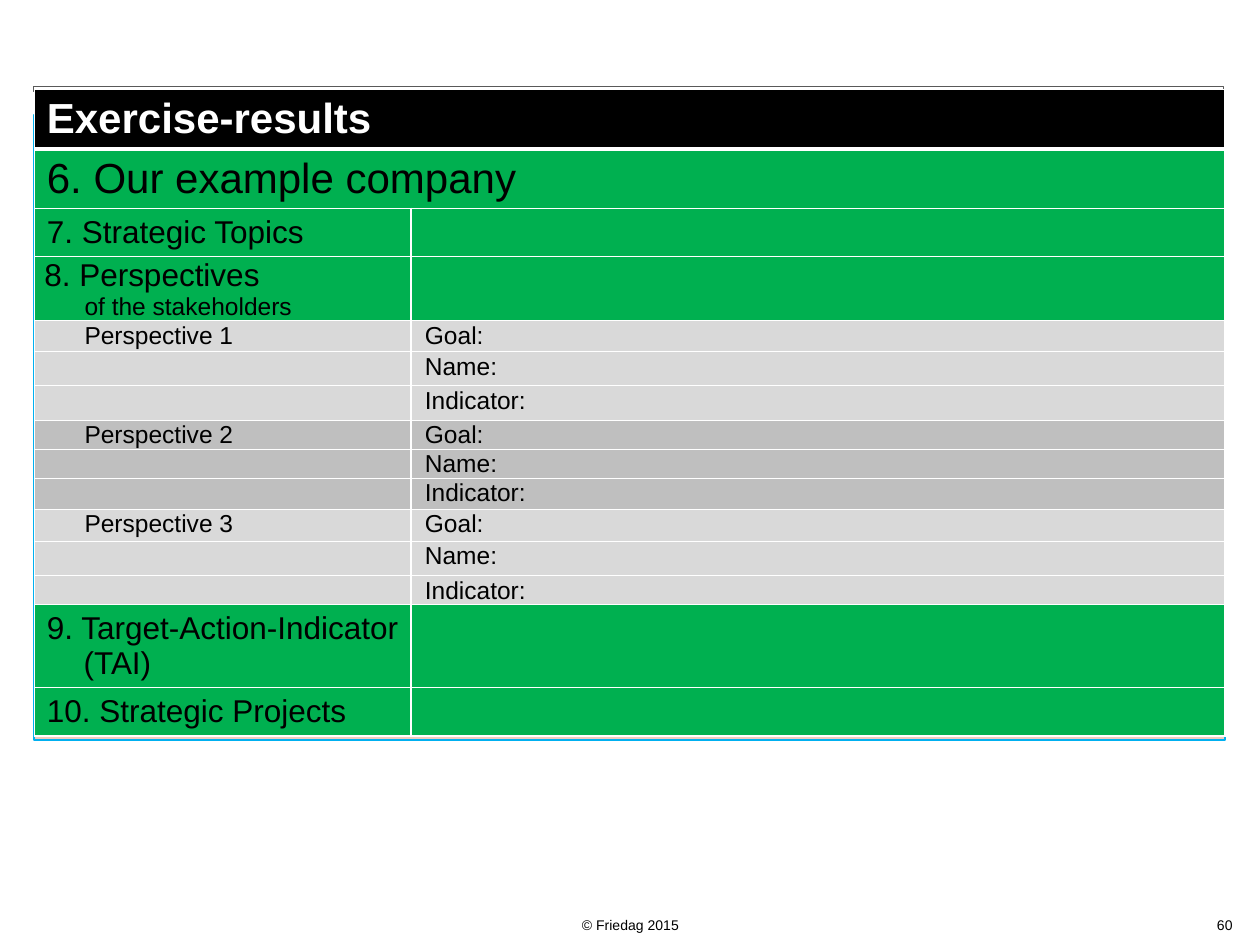
from dataclasses import dataclass

from lxml.etree import SubElement
from pptx import Presentation
from pptx.dml.color import RGBColor
from pptx.enum.shapes import MSO_SHAPE
from pptx.enum.text import MSO_ANCHOR, PP_ALIGN
from pptx.oxml.ns import qn
from pptx.util import Pt


@dataclass(frozen=True)
class Theme:
    font: str = "Arial"
    black: str = "000000"
    white: str = "FFFFFF"
    green: str = "00B050"
    light: str = "D9D9D9"
    dark: str = "BFBFBF"
    rule: str = "595959"
    orange: str = "CA5526"
    blue: str = "00B0F0"
    heading: int = 24
    topic: int = 18
    detail: int = 14
    footer: int = 8


theme = Theme()


def style_font(font, size, color=theme.black, bold=False):
    font.name = theme.font
    font.size = Pt(size)
    font.bold = bold
    font.color.rgb = RGBColor.from_string(color)


def style_cell(cell, fill, bottom=1, top=1):
    """White borders around a solid fill."""
    properties = cell._tc.get_or_add_tcPr()
    for side, width in (("L", 1), ("R", 1), ("T", top), ("B", bottom)):
        border = SubElement(properties, qn(f"a:ln{side}"), w=str(Pt(width)))
        border_fill = SubElement(border, qn("a:solidFill"))
        SubElement(border_fill, qn("a:srgbClr"), val=theme.white)
    cell.fill.solid()
    cell.fill.fore_color.rgb = RGBColor.from_string(fill)


presentation = Presentation()
presentation.slide_width, presentation.slide_height = Pt(720), Pt(540)
slide = presentation.slides.add_slide(presentation.slide_layouts[6])

# Thin rule above the table and tinted panel behind it
for left, top, width, height, fill, line, line_width in (
    (19, 49.7, 680, 2.9, theme.white, theme.rule, 0.5),
    (19.6, 65.5, 680.4, 357.3, theme.orange, theme.blue, 1),
):
    shape = slide.shapes.add_shape(
        MSO_SHAPE.RECTANGLE, Pt(left), Pt(top), Pt(width), Pt(height))
    shape.shadow.inherit = False
    shape.fill.solid()
    shape.fill.fore_color.rgb = RGBColor.from_string(fill)
    shape.line.color.rgb = RGBColor.from_string(line)
    shape.line.width = Pt(line_width)
panel_color = shape.fill._xPr.find(f"{qn('a:solidFill')}/{qn('a:srgbClr')}")
SubElement(panel_color, qn("a:alpha"), val="29000")

# Rows: height, fill, left text, right text, size, left margin, hanging indent
rows = [
    (34, theme.black, "Exercise-results", "", theme.heading, 0, 0),
    (34, theme.green, "6. Our example company", "", theme.heading, 0, 0),
    (27.5, theme.green, "7. Strategic Topics", "", theme.topic, 0, 0),
    (36.6, theme.green, "8. Perspectives", "", theme.topic, 28, -23),
]
perspective_heights = ((17.7, 19.4, 20), (16.3, 16.6, 17.7), (18.3, 19.7, 16.3))
for number, heights in enumerate(perspective_heights, 1):
    fill = theme.light if number % 2 else theme.dark
    for height, label in zip(heights, ("Goal:", "Name:", "Indicator:")):
        name = f"Perspective {number}" if label == "Goal:" else ""
        rows.append((height, fill, name, label, theme.detail, 28, 0))
rows += [
    (47.4, theme.green, "9. Target-Action-Indicator (TAI)", "", theme.topic, 21, -21),
    (27.7, theme.green, "10. Strategic Projects", "", theme.topic, 0, 0),
]

# Results table
table = slide.shapes.add_table(
    len(rows), 2, Pt(19.6), Pt(51.1), Pt(680.4), Pt(sum(row[0] for row in rows))).table
table.horz_banding = False
table.columns[0].width, table.columns[1].width = Pt(215.3), Pt(465.1)

for index, (height, fill, name, label, size, margin, indent) in enumerate(rows):
    table.rows[index].height = Pt(height)
    is_header = index == 0
    for column, (text, left) in enumerate(((name, margin), (label, 7.2))):
        cell = table.cell(index, column)
        style_cell(cell, fill, 3 if is_header else 1, 3 if index == 1 else 1)
        if size == theme.detail or index == 3:
            cell.margin_left, cell.margin_right = Pt(0.72), Pt(0.72)
            cell.margin_top, cell.margin_bottom = Pt(0.72), Pt(0)
        paragraph = cell.text_frame.paragraphs[0]
        if not text:
            # Small end mark keeps the empty cell from stretching its row
            SubElement(paragraph._p, qn("a:endParaRPr"), sz=str(theme.footer * 100))
            continue
        paragraph_properties = paragraph._p.get_or_add_pPr()
        paragraph_properties.set("marL", str(Pt(left)))
        paragraph_properties.set("indent", str(Pt(0 if column else indent)))
        paragraph.add_run().text = text
        style_font(paragraph.font, size,
                   theme.white if is_header else theme.black, is_header)

# Full-width rows and the subtitle under the perspectives heading
for index in range(2):
    table.cell(index, 0).merge(table.cell(index, 1))
paragraph = table.cell(3, 0).text_frame.paragraphs[0]
paragraph.add_line_break()
subtitle = paragraph.add_run()
subtitle.text = "of the stakeholders"
subtitle.font.size = Pt(theme.detail)

# Footer and page number
for text, left, width, alignment in (
    ("© Friedag 2015", 246.2, 228.2, PP_ALIGN.CENTER),
    ("60", 561.6, 149.8, PP_ALIGN.RIGHT),
):
    frame = slide.shapes.add_textbox(Pt(left), Pt(508.3), Pt(width), Pt(28)).text_frame
    frame.word_wrap = True
    frame.vertical_anchor = MSO_ANCHOR.BOTTOM
    frame.margin_top, frame.margin_bottom = Pt(0), Pt(2.9)
    paragraph = frame.paragraphs[0]
    paragraph.text = text
    paragraph.alignment = alignment
    style_font(paragraph.font, theme.footer)

presentation.save("out.pptx")
